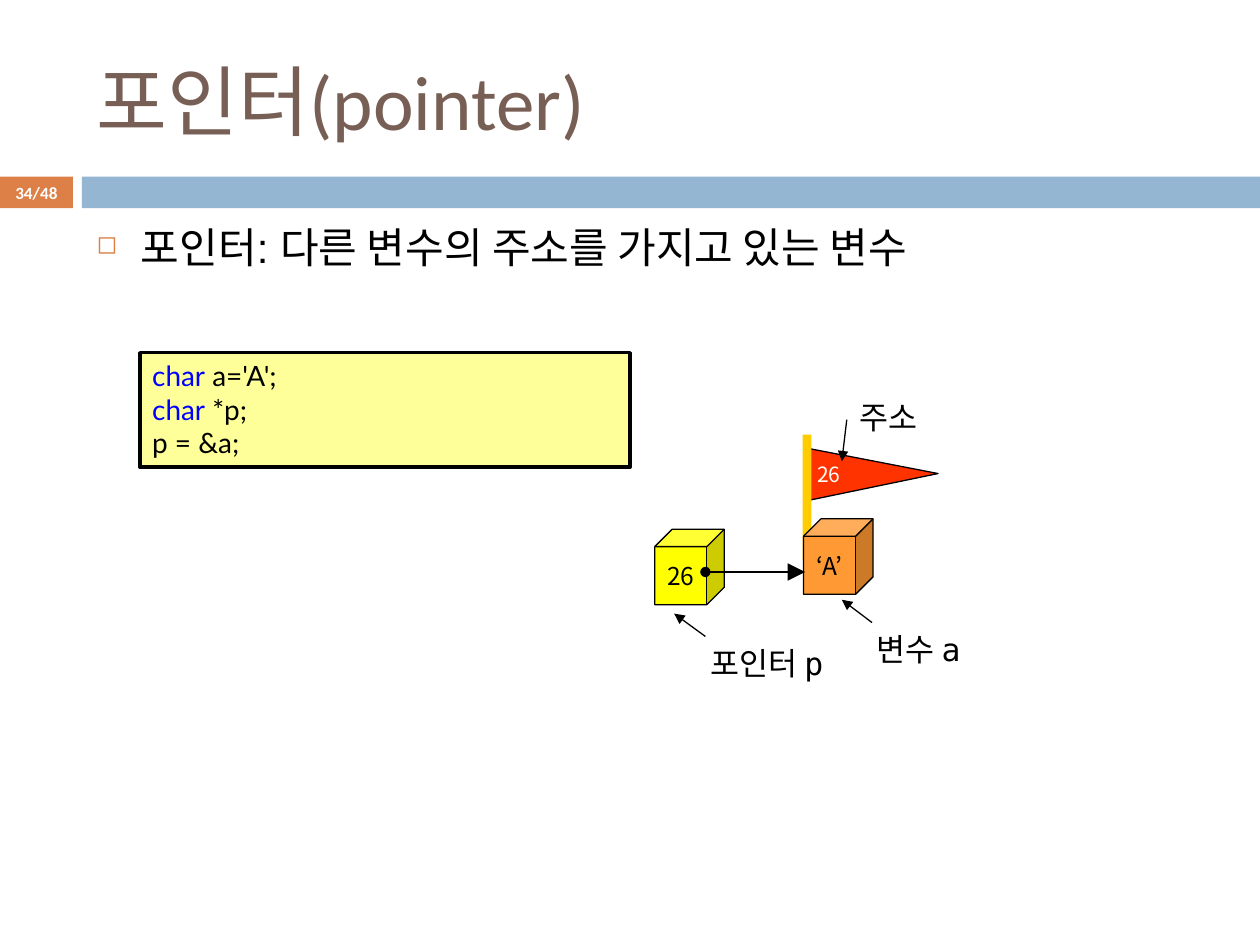
import pptx
import pptx.dml.color
import pptx.enum.shapes
import pptx.enum.text
import pptx.oxml
import pptx.oxml.ns
import pptx.util

Cm = pptx.util.Cm
Pt = pptx.util.Pt
RGBColor = pptx.dml.color.RGBColor
Shape = pptx.enum.shapes.MSO_SHAPE
Align = pptx.enum.text.PP_ALIGN
Anchor = pptx.enum.text.MSO_ANCHOR

BLACK = RGBColor(0, 0, 0)
WHITE = RGBColor(255, 255, 255)
BROWN = RGBColor(0x77, 0x5F, 0x55)
RUST = RGBColor(0xDD, 0x80, 0x47)
SKY = RGBColor(0x94, 0xB6, 0xD2)
RED = RGBColor(0xFF, 0x33, 0x00)
GOLD = RGBColor(0xFF, 0xCC, 0x00)
ORANGE = RGBColor(0xFF, 0x99, 0x33)
YELLOW = RGBColor(0xFF, 0xFF, 0x00)
CREAM = RGBColor(0xFF, 0xFF, 0x99)
BLUE = RGBColor(0, 0, 0xFF)


def add_element(parent, tag, **attributes):
    """Append a drawing element with attributes to a parent element."""
    child = pptx.oxml.parse_xml(f"<a:{tag} {pptx.oxml.ns.nsdecls('a')}/>")
    for name, value in attributes.items():
        child.set(name, value)
    parent.append(child)
    return child


def add_span(para, text, font, size, color, bold=False):
    """Add one formatted run to a paragraph."""
    span = para.add_run()
    span.text = text
    span.font.name = font
    span.font.size = Pt(size)
    span.font.color.rgb = color
    span.font.bold = bold


def add_block(page, kind, left, top, width, height, fill, line=None):
    """Add a filled preset shape, outlined when a line width is given."""
    block = page.shapes.add_shape(kind, Cm(left), Cm(top), Cm(width), Cm(height))
    block.shadow.inherit = False
    block.fill.solid()
    block.fill.fore_color.rgb = fill
    if line:
        block.line.color.rgb = BLACK
        block.line.width = Pt(line)
    else:
        block.line.fill.background()
    return block


def add_label(page, left, top, width, height, wrap=True, anchor=Anchor.TOP):
    """Add an empty text box and return its first paragraph."""
    box = page.shapes.add_textbox(Cm(left), Cm(top), Cm(width), Cm(height))
    box.text_frame.word_wrap = wrap
    box.text_frame.vertical_anchor = anchor
    return box.text_frame.paragraphs[0]


def add_arrow(page, x1, y1, x2, y2, head=None, size="med"):
    """Add a thin black arrow, with an optional mark at its start."""
    arrow = page.shapes.add_connector(
        pptx.enum.shapes.MSO_CONNECTOR.STRAIGHT, Cm(x1), Cm(y1), Cm(x2), Cm(y2))
    arrow.line.color.rgb = BLACK
    arrow.line.width = Pt(0.75)
    outline = arrow.line._get_or_add_ln()
    if head:
        add_element(outline, "headEnd", type=head)
    add_element(outline, "tailEnd", type="triangle", w=size, len=size)
    add_element(arrow._element.spPr, "effectLst")


def add_header(page, left, top, width):
    """Place the title, the coloured band and the page number."""
    title = add_label(page, left + 1.7, top + 0.64, width - 2.74, 2.74, anchor=Anchor.MIDDLE)
    add_span(title, "포인터(pointer)", "Calibri", 44, BROWN)
    add_block(page, Shape.RECTANGLE, left, top + 3.56, 1.47, 0.64, RUST)
    add_block(page, Shape.RECTANGLE, left + 1.65, top + 3.56, width - 1.65, 0.64, SKY)
    number = add_label(page, left, top + 3.53, 1.47, 0.69, anchor=Anchor.MIDDLE)
    number.alignment = Align.CENTER
    add_span(number, "34/48", "Calibri", 9.8, WHITE, bold=True)


def add_definition(page, left, top, width, height):
    """Place the bulleted definition."""
    para = add_label(page, left, top, width, height)
    para.line_spacing = 0.9
    properties = para._p.get_or_add_pPr()
    properties.set("marL", str(Cm(0.89)))
    properties.set("indent", str(Cm(-0.89)))
    color = add_element(properties, "buClr")
    add_element(color, "srgbClr", val=str(RUST))
    add_element(properties, "buSzPct", val="60000")
    add_element(properties, "buChar", char="◻")
    add_span(para, "포인터: 다른 변수의 주소를 가지고 있는 변수", "Arial", 24, BLACK)


def add_code(page, left, top, width, height):
    """Place the framed code listing."""
    box = add_block(page, Shape.RECTANGLE, left, top, width, height, CREAM, 2)
    frame = box.text_frame
    frame.word_wrap = True
    frame.vertical_anchor = Anchor.TOP
    lines = [("char", " a='A';"), ("char", " *p;"), ("", "p = &a;")]
    for index, (keyword, rest) in enumerate(lines):
        para = frame.add_paragraph() if index else frame.paragraphs[0]
        para.alignment = Align.JUSTIFY
        if keyword:
            add_span(para, keyword, "Lato", 16, BLUE)
        add_span(para, rest, "Lato", 16, BLACK)


def add_flag(page, left, top):
    """Place the address flag, pointing right, and its pole."""
    flag = add_block(page, Shape.ISOSCELES_TRIANGLE, left + 0.86, top - 0.53, 1.07, 2.67, RED, 0.75)
    flag.adjustments[0] = 0.484
    flag.rotation = 90
    frame = flag.text_frame
    frame.margin_left = frame.margin_right = frame.margin_top = 0
    frame.margin_bottom = Cm(0.23)
    frame.vertical_anchor = Anchor.MIDDLE
    frame._txBody.bodyPr.set("vert", "vert270")
    para = frame.paragraphs[0]
    para.alignment = Align.LEFT
    add_span(para, "26", "Noto Sans CJK KR", 12, WHITE)
    add_block(page, Shape.RECTANGLE, left, top, 0.18, 2.54, GOLD)


def add_cube(page, left, top, fill, value):
    """Place a memory cell holding a value."""
    cube = add_block(page, Shape.CUBE, left, top, 1.4, 1.52, fill, 0.75)
    cube.adjustments[0] = 0.25
    cube.text_frame.word_wrap = False
    cube.text_frame.vertical_anchor = Anchor.MIDDLE
    para = cube.text_frame.paragraphs[0]
    para.alignment = Align.CENTER
    add_span(para, value, "Noto Sans CJK KR", 14, BLACK)


def add_diagram(page, left, top):
    """Place the pointer cell, the variable cell and their labels."""
    add_flag(page, left + 2.98, top + 0.86)
    add_cube(page, left + 3, top + 2.56, ORANGE, "‘A’")
    add_cube(page, left, top + 2.77, YELLOW, "26")
    labels = [("주소", 3.87, 0, 1.78), ("변수 a", 4.22, 4.67, 2.54), ("포인터 p", 0.87, 4.95, 3.18)]
    for text, x, y, width in labels:
        para = add_label(page, left + x, top + y, width, 1.02, wrap=False)
        add_span(para, text, "DejaVu Sans Mono", 18, BLACK)
    for x1, y1, x2, y2 in [(3.87, 0.56, 3.77, 1.4), (4.38, 4.65, 3.77, 4.19), (1.02, 4.93, 0.39, 4.47)]:
        add_arrow(page, left + x1, top + y1, left + x2, top + y2)
    add_arrow(page, left + 1.02, top + 3.63, left + 3.03, top + 3.63, head="oval", size="lg")


def main():
    """Build the slide and save it."""
    deck = pptx.Presentation()
    deck.slide_width, deck.slide_height = Cm(25.4), Cm(19.05)
    page = deck.slides.add_slide(deck.slide_layouts[6])
    add_header(page, 0, 0, 25.4)
    add_definition(page, 1.7, 4.45, 21.51, 1.83)
    add_diagram(page, 13.2, 7.9)
    add_code(page, 2.82, 7.11, 9.88, 2.31)
    deck.save("out.pptx")


if __name__ == "__main__":
    main()
